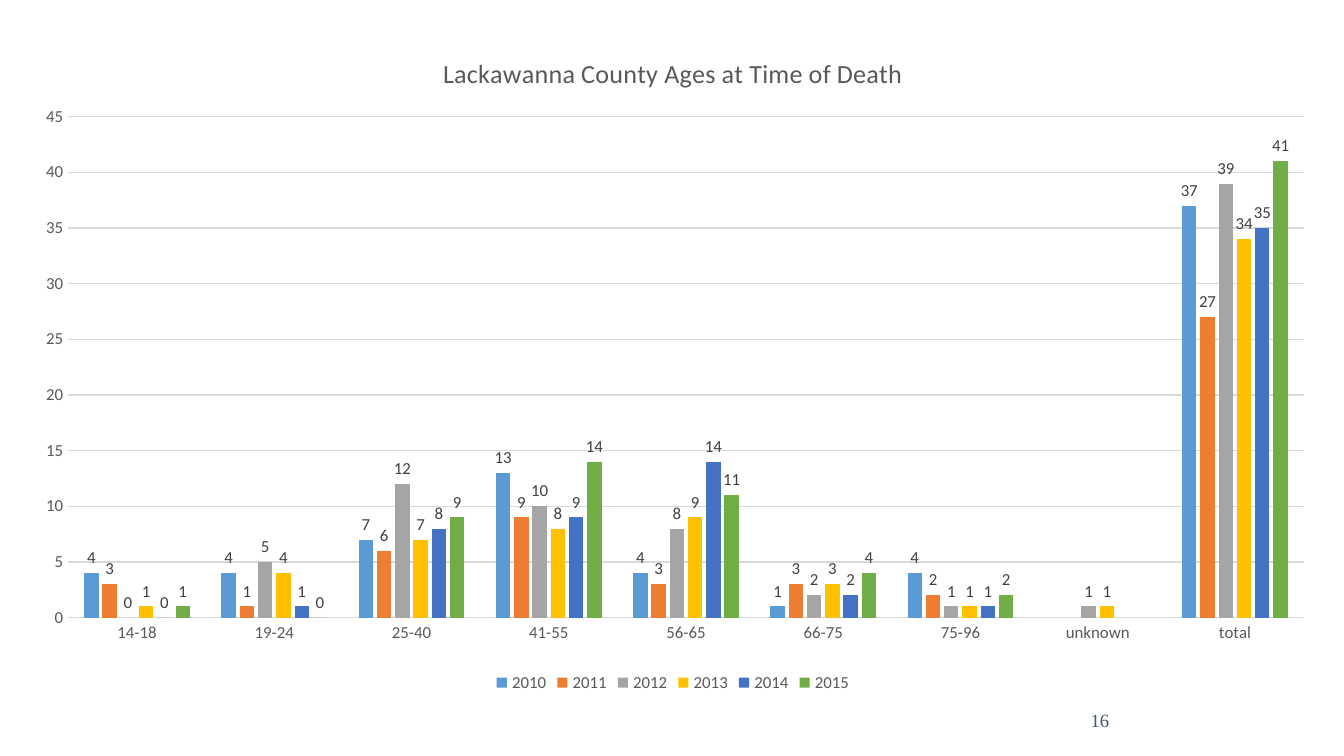
from lxml import etree
from pptx import Presentation
from pptx.chart.data import CategoryChartData
from pptx.dml.color import RGBColor
from pptx.enum.chart import (XL_CHART_TYPE as ChartType, XL_LABEL_POSITION as LabelPos,
                             XL_LEGEND_POSITION as LegendPos, XL_TICK_MARK as Tick)
from pptx.enum.text import MSO_ANCHOR, PP_ALIGN
from pptx.oxml.ns import qn
from pptx.util import Pt

PX = 914400 / 134.4
COLORS = {"title": "595959", "label": "404040", "grid": "D9D9D9", "page": "44546A",
          "2010": "5B9BD5", "2011": "ED7D31", "2012": "A5A5A5",
          "2013": "FFC000", "2014": "4472C4", "2015": "70AD47"}
AGES = ["14-18", "19-24", "25-40", "41-55", "56-65", "66-75", "75-96", "unknown", "total"]
DEATHS = {
    "2010": [4, 4, 7, 13, 4, 1, 4, None, 37],
    "2011": [3, 1, 6, 9, 3, 3, 2, None, 27],
    "2012": [0, 5, 12, 10, 8, 2, 1, 1, 39],
    "2013": [1, 4, 7, 8, 9, 3, 1, 1, 34],
    "2014": [0, 1, 8, 9, 14, 2, 1, None, 35],
    "2015": [1, 0, 9, 14, 11, 4, 2, None, 41],
}


def px(n):
    return round(n * PX)


def color(name):
    return RGBColor.from_string(COLORS[name])


def style_font(font, size, name, face="Calibri"):
    font.size = Pt(size)
    font.name = face
    font.bold = False
    font.color.rgb = color(name)


def style_line(line):
    line.color.rgb = color("grid")
    line.width = Pt(0.75)


def style_axis(axis):
    axis.major_tick_mark = axis.minor_tick_mark = Tick.NONE
    style_font(axis.tick_labels.font, 9, "title")


def place_plot(chart, **fractions):
    """Fix the inner plot area, in fractions of the chart."""
    area = chart._chartSpace.chart.plotArea
    for old in area.findall(qn("c:layout")):
        area.remove(old)
    layout = etree.Element(qn("c:layout"))
    manual = etree.SubElement(layout, qn("c:manualLayout"))
    settings = {"layoutTarget": "inner", "xMode": "edge", "yMode": "edge", **fractions}
    for tag, value in settings.items():
        etree.SubElement(manual, qn(f"c:{tag}")).set("val", str(value))
    area.insert(0, layout)


def add_deaths_chart(slide, x, y, w, h):
    data = CategoryChartData()
    data.categories = AGES
    for year, values in DEATHS.items():
        data.add_series(year, values)
    chart = slide.shapes.add_chart(ChartType.COLUMN_CLUSTERED,
                                   px(x), px(y), px(w), px(h), data).chart
    chart.font.size = Pt(10)
    chart.font.name = "Calibri"

    # Title and legend
    tf = chart.chart_title.text_frame
    tf.text = "Lackawanna County Ages at Time of Death"
    style_font(tf.paragraphs[0].runs[0].font, 14, "title")
    chart.chart_title.include_in_layout = False
    chart.has_legend = True
    chart.legend.position = LegendPos.BOTTOM
    chart.legend.include_in_layout = False
    style_font(chart.legend.font, 9, "title")

    # Axes
    ages, counts = chart.category_axis, chart.value_axis
    style_axis(ages)
    style_axis(counts)
    style_line(ages.format.line)
    style_line(counts.major_gridlines.format.line)
    counts.format.line.fill.background()
    counts.minimum_scale, counts.maximum_scale, counts.major_unit = 0, 45, 5

    # Columns and their labels
    plot = chart.plots[0]
    plot.gap_width, plot.overlap = 219, -27
    plot.vary_by_categories = False
    for series in plot.series:
        series.format.fill.solid()
        series.format.fill.fore_color.rgb = color(series.name)
        labels = series.data_labels
        labels.show_value = True
        labels.position = LabelPos.OUTSIDE_END
        style_font(labels.font, 9, "label")
    place_plot(chart, x=0.04, y=0.13, w=0.94, h=0.75)


def add_page_number(slide, text, x, y, w, h):
    tf = slide.shapes.add_textbox(px(x), px(y), px(w), px(h)).text_frame
    tf.word_wrap = True
    tf.vertical_anchor = MSO_ANCHOR.MIDDLE
    tf.text = text
    p = tf.paragraphs[0]
    p.alignment = PP_ALIGN.CENTER
    style_font(p.runs[0].font, 10, "page", "Times New Roman")


def main():
    prs = Presentation()
    prs.slide_width, prs.slide_height = px(1344), px(756)
    slide = prs.slides.add_slide(prs.slide_layouts[6])
    add_page_number(slide, "16", 949, 700, 302, 40)
    add_deaths_chart(slide, 16, 30, 1314, 668)
    prs.save("out.pptx")


if __name__ == "__main__":
    main()
